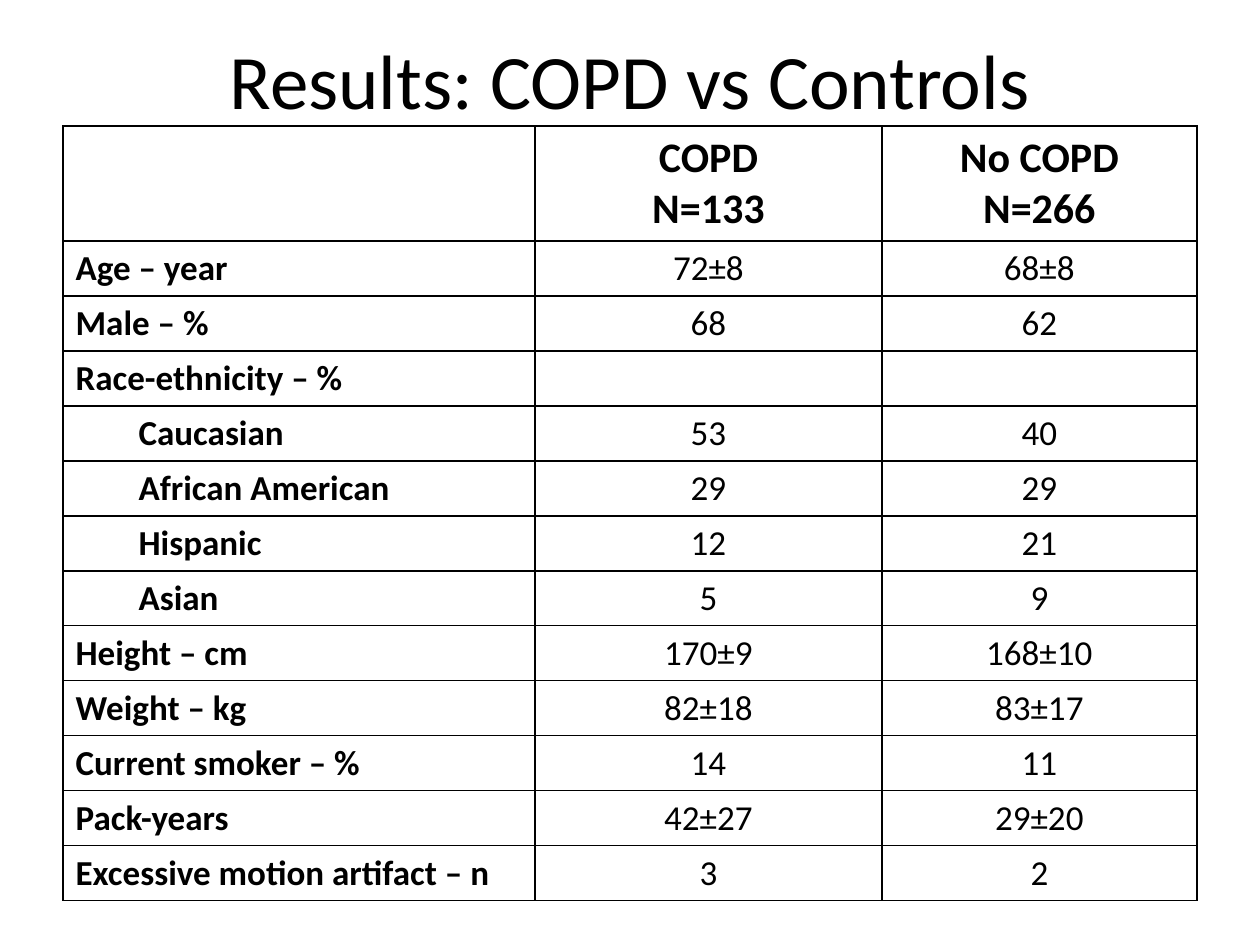
import pptx
import pptx.util
import pptx.dml.color
import pptx.enum.text
import pptx.oxml
import pptx.oxml.ns

BLACK = pptx.dml.color.RGBColor(0, 0, 0)
FONT = "Calibri"
PX = 914400 // 126
CENTER = pptx.enum.text.PP_ALIGN.CENTER
LEFT = pptx.enum.text.PP_ALIGN.LEFT

TITLE = "Results: COPD vs Controls"
ROWS = [
    ("", "COPD\nN=133", "No COPD\nN=266"),
    ("Age – year", "72±8", "68±8"),
    ("Male – %", "68", "62"),
    ("Race-ethnicity – %", "", ""),
    ("\tCaucasian", "53", "40"),
    ("\tAfrican American", "29", "29"),
    ("\tHispanic", "12", "21"),
    ("\tAsian", "5", "9"),
    ("Height – cm", "170±9", "168±10"),
    ("Weight – kg", "82±18", "83±17"),
    ("Current smoker – %", "14", "11"),
    ("Pack-years", "42±27", "29±20"),
    ("Excessive motion artifact – n", "3", "2"),
]
COL_WIDTHS = [472, 347, 315]
HEADER_HEIGHT, ROW_HEIGHT = 115, 55
TABLE_LEFT, TABLE_TOP = 63, 126


def px(n):
    return pptx.util.Emu(n * PX)


def write(tf, text, size, bold, align):
    tf.text = text
    for p in tf.paragraphs:
        p.alignment = align
        p.font.name = FONT
        p.font.size = pptx.util.Pt(size)
        p.font.bold = bold
        p.font.color.rgb = BLACK


def add_borders(cell):
    tc_pr = cell._tc.get_or_add_tcPr()
    for i, side in enumerate(("lnL", "lnR", "lnT", "lnB")):
        tc_pr.insert(i, pptx.oxml.parse_xml(
            f'<a:{side} {pptx.oxml.ns.nsdecls("a")} w="12700"><a:solidFill>'
            f'<a:srgbClr val="{BLACK}"/></a:solidFill></a:{side}>'))


def add_title(s):
    tf = s.shapes.add_textbox(px(63), 0, px(1134), px(158)).text_frame
    tf.word_wrap = True
    tf.vertical_anchor = pptx.enum.text.MSO_ANCHOR.MIDDLE
    write(tf, TITLE, 44, False, CENTER)


def add_results(s):
    heights = [HEADER_HEIGHT] + [ROW_HEIGHT] * (len(ROWS) - 1)
    table = s.shapes.add_table(
        len(ROWS), len(COL_WIDTHS), px(TABLE_LEFT), px(TABLE_TOP),
        px(sum(COL_WIDTHS)), px(sum(heights))).table
    table.first_row = table.horz_banding = False
    for col, width in zip(table.columns, COL_WIDTHS):
        col.width = px(width)
    for i, (values, height) in enumerate(zip(ROWS, heights)):
        table.rows[i].height = px(height)
        for j, text in enumerate(values):
            cell = table.cell(i, j)
            cell.fill.background()
            add_borders(cell)
            write(cell.text_frame, text, 20 if i else 24,
                  i == 0 or j == 0, CENTER if j else LEFT)


def main():
    prs = pptx.Presentation()
    prs.slide_width, prs.slide_height = px(1260), px(945)
    s = prs.slides.add_slide(prs.slide_layouts[6])
    add_title(s)
    add_results(s)
    prs.save("out.pptx")


if __name__ == "__main__":
    main()
